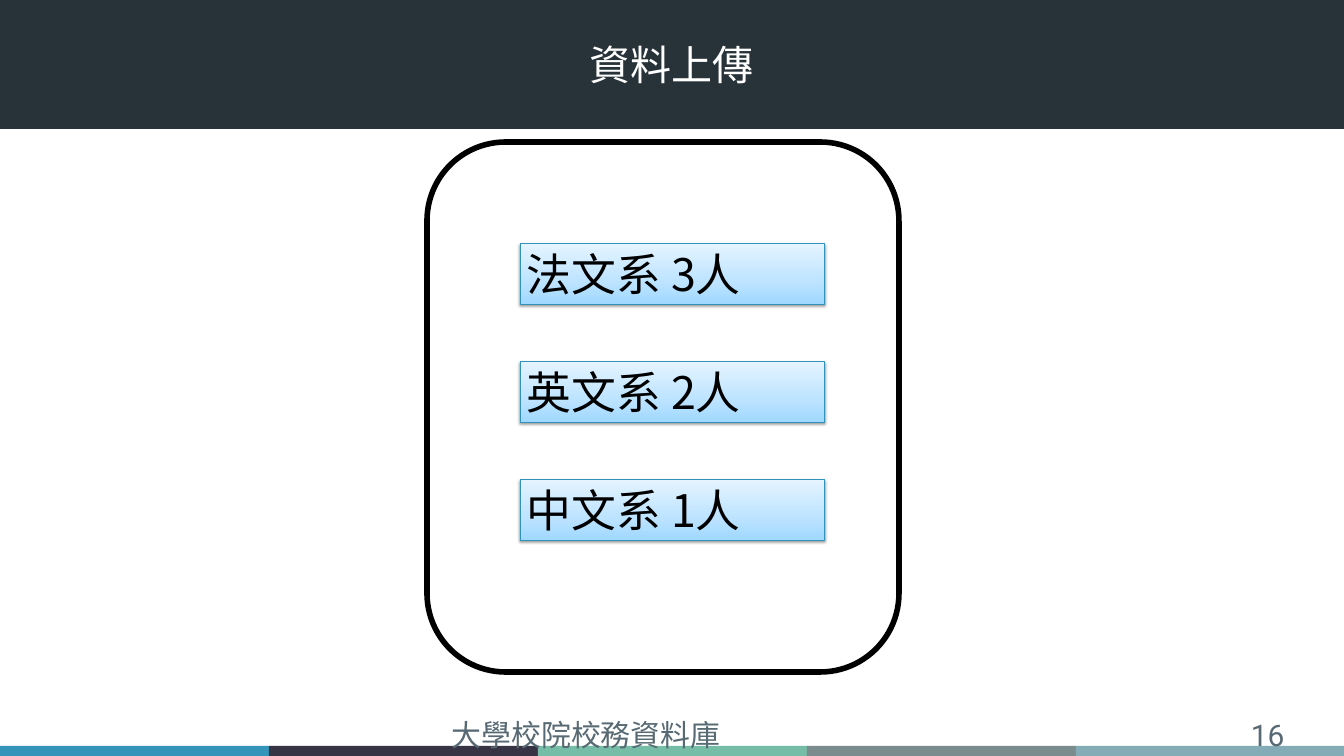
from lxml.etree import SubElement
from pptx import Presentation
from pptx.dml.color import RGBColor
from pptx.enum.shapes import MSO_SHAPE as SHAPE
from pptx.enum.text import MSO_ANCHOR as ANCHOR, PP_ALIGN as ALIGN
from pptx.oxml import parse_xml
from pptx.oxml.ns import nsdecls, qn
from pptx.util import Pt

TITLE = "資料上傳"
DEPARTMENTS = ["法文系 3人", "英文系 2人", "中文系 1人"]
FOOTER = "大學校院校務資料庫"
PAGE_NUMBER = "16"

WHITE = RGBColor(0xFF, 0xFF, 0xFF)
BLACK = RGBColor(0x00, 0x00, 0x00)
HEADER = RGBColor(0x27, 0x33, 0x39)
MUTED = RGBColor(0x57, 0x69, 0x73)
BOX_LINE = RGBColor(0x30, 0x92, 0xB9)
STRIP = [RGBColor(0x34, 0x94, 0xBA), RGBColor(0x37, 0x35, 0x45),
         RGBColor(0x75, 0xBD, 0xA7), RGBColor(0x7A, 0x8C, 0x8E),
         RGBColor(0x84, 0xAC, 0xB6)]
BOX_STOPS = [(0, RGBColor(0xA0, 0xD8, 0xFF)), (35, RGBColor(0xBC, 0xE3, 0xFF)),
             (100, RGBColor(0xE5, 0xF4, 0xFF))]

SLIDE_W, SLIDE_H = 1344, 756
EMU_PER_PX = 20 * 914400 / SLIDE_W
BOX_X, BOX_Y, BOX_W, BOX_H, BOX_STEP = 520, 243, 304, 61, 118
STRIP_W, STRIP_H = 269, 10


def px(*lengths):
    return [round(n * EMU_PER_PX) for n in lengths]


def add_shape(slide, box, kind=SHAPE.RECTANGLE, fill=None, line=None, width=0):
    s = slide.shapes.add_shape(kind, *px(*box))
    s.shadow.inherit = False
    if fill is None:
        s.fill.background()
    else:
        s.fill.solid()
        s.fill.fore_color.rgb = fill
    if line is None:
        s.line.fill.background()
    else:
        s.line.color.rgb = line
        s.line.width = Pt(width)
    return s


def set_text(s, text, size, color, font="Roboto", align=ALIGN.LEFT,
             anchor=ANCHOR.TOP):
    tf = s.text_frame
    tf.word_wrap = True
    tf.vertical_anchor = anchor
    if anchor == ANCHOR.MIDDLE:
        tf.margin_top = tf.margin_bottom = 0
    p = tf.paragraphs[0]
    p.alignment = align
    r = p.add_run()
    r.text = text
    r.font.size = Pt(size)
    r.font.color.rgb = color
    r.font.name = font
    SubElement(r.font._element, qn("a:ea"), typeface=font)


def add_text(slide, box, text, **style):
    set_text(slide.shapes.add_textbox(*px(*box)), text, **style)


def style_box(s):
    """Give a department box its upward gradient and soft drop shadow."""
    stops = "".join(f'<a:gs pos="{pos * 1000}"><a:srgbClr val="{color}"/></a:gs>'
                    for pos, color in BOX_STOPS)
    gradient = parse_xml(f'<a:gradFill {nsdecls("a")} rotWithShape="1">'
                         f'<a:gsLst>{stops}</a:gsLst>'
                         '<a:lin ang="16200000" scaled="0"/></a:gradFill>')
    shadow = parse_xml(f'<a:outerShdw {nsdecls("a")} blurRad="{Pt(3.1)}" '
                       f'dist="{Pt(1.6)}" dir="5400000" rotWithShape="0">'
                       f'<a:srgbClr val="{BLACK}"><a:alpha val="38000"/>'
                       '</a:srgbClr></a:outerShdw>')
    sp_pr = s._element.spPr
    sp_pr.replace(sp_pr.find(qn("a:solidFill")), gradient)
    sp_pr.find(qn("a:effectLst")).append(shadow)


def main():
    prs = Presentation()
    prs.slide_width, prs.slide_height = px(SLIDE_W, SLIDE_H)
    slide = prs.slides.add_slide(prs.slide_layouts[6])

    add_shape(slide, (0, -1, SLIDE_W, 130), fill=HEADER)
    for i, color in enumerate(STRIP):
        x = i * STRIP_W
        add_shape(slide, (x, SLIDE_H - STRIP_H, min(STRIP_W, SLIDE_W - x), STRIP_H),
                  fill=color)

    add_text(slide, (92, 27, 1159, 74), TITLE, size=44, color=WHITE,
             align=ALIGN.CENTER, anchor=ANCHOR.MIDDLE)
    add_text(slide, (445, 713, 454, 31), FOOTER, size=32, color=MUTED)
    add_text(slide, (989, 713, 302, 31), PAGE_NUMBER, size=32, color=MUTED,
             align=ALIGN.RIGHT)

    for i, department in enumerate(DEPARTMENTS):
        s = add_shape(slide, (BOX_X, BOX_Y + i * BOX_STEP, BOX_W, BOX_H),
                      fill=WHITE, line=BOX_LINE, width=0.75)
        style_box(s)
        set_text(s, department, size=48, color=BLACK, font="Noto Sans CJK SC",
                 anchor=ANCHOR.MIDDLE)

    add_shape(slide, (427, 142, 472, 530), SHAPE.ROUNDED_RECTANGLE,
              line=BLACK, width=6)
    prs.save("out.pptx")


if __name__ == "__main__":
    main()
